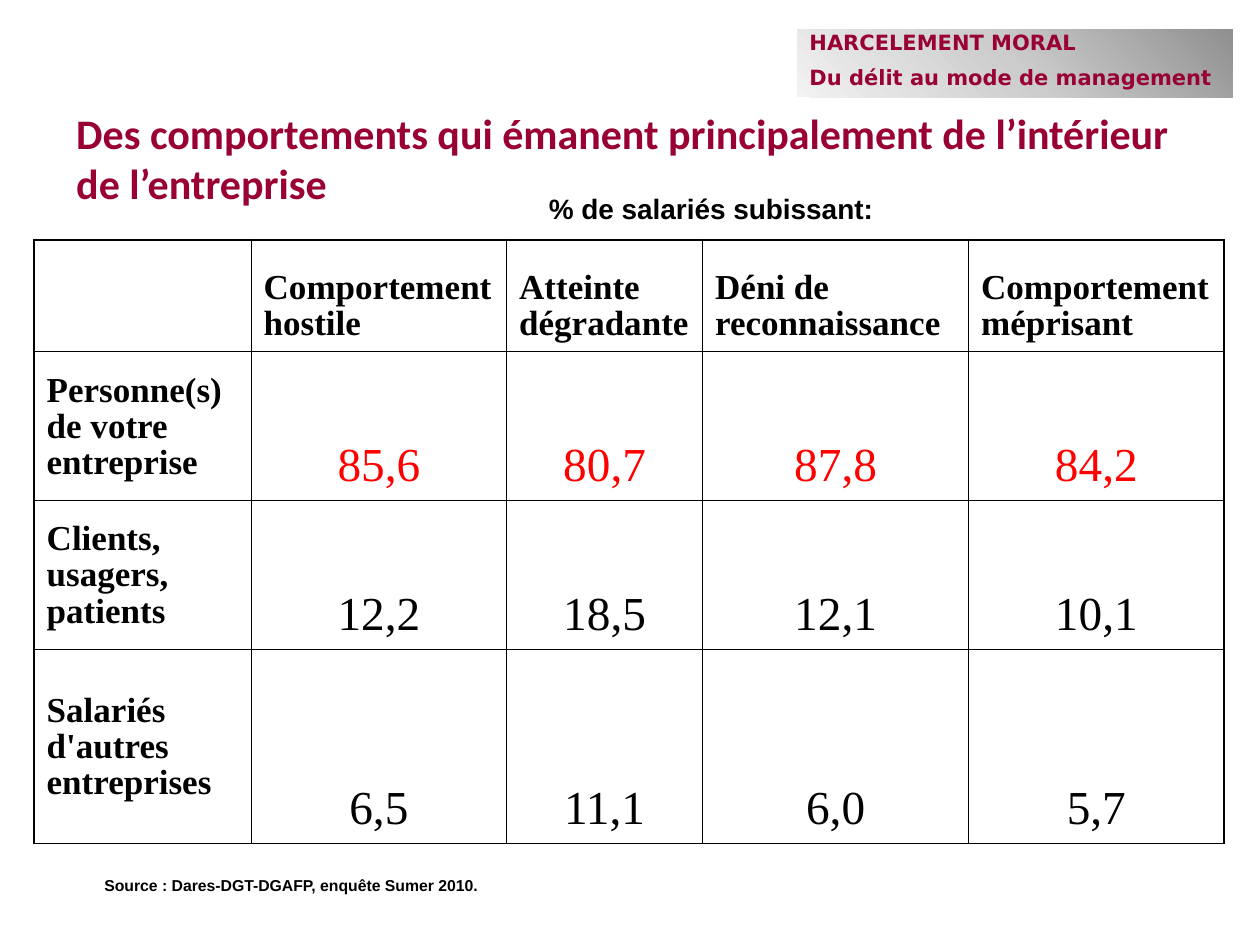
from dataclasses import dataclass

from lxml.etree import SubElement
from pptx import Presentation
from pptx.dml.color import RGBColor
from pptx.enum.shapes import MSO_SHAPE as Shape
from pptx.enum.text import MSO_ANCHOR as Anchor, PP_ALIGN as Align
from pptx.oxml.ns import qn
from pptx.util import Pt

PLUM, BLACK, RED, WHITE = "990033", "000000", "FF0000", "FFFFFF"
OUTER, INNER = 1.08, 0.45

COLUMN_WIDTHS = (124, 146, 112, 152, 146)
ROW_HEIGHTS = (64, 85, 85, 111)
BEHAVIOURS = ("", "Comportement hostile", "Atteinte dégradante",
              "Déni de reconnaissance", "Comportement méprisant")


@dataclass
class Origin:
    label: str
    rates: tuple[str, ...]
    color: str = BLACK


ORIGINS = (
    Origin("Personne(s) de votre entreprise", ("85,6", "80,7", "87,8", "84,2"), RED),
    Origin("Clients, usagers, patients", ("12,2", "18,5", "12,1", "10,1")),
    Origin("Salariés d'autres entreprises", ("6,5", "11,1", "6,0", "5,7")),
)


@dataclass
class Caption:
    text: str
    box: tuple[float, float, float, float]
    size: float
    font: str = "Arial"
    color: str = BLACK
    anchor: Anchor = Anchor.TOP


CAPTIONS = (
    Caption("Des comportements qui émanent principalement de l’intérieur de l’entreprise",
            (36.5, 62.5, 648, 60), 24, "Calibri", PLUM, Anchor.BOTTOM),
    Caption("% de salariés subissant:", (306.5, 109.5, 218, 19), 16, anchor=Anchor.MIDDLE),
    Caption("Source : Dares-DGT-DGAFP, enquête Sumer 2010.", (52.5, 497, 261.5, 18), 9),
)


def rgb(color: str) -> RGBColor:
    return RGBColor.from_string(color)


def write(frame, text: str, *, size: float, font: str, color: str = BLACK, bold: bool = True,
          align: Align = Align.LEFT, spacing: float = 1.0, gap: float = 0) -> None:
    """Fill a text frame, one paragraph a line, with gap points between paragraphs."""
    for index, line in enumerate(text.split("\n")):
        paragraph = frame.add_paragraph() if index else frame.paragraphs[0]
        paragraph.alignment = align
        paragraph.line_spacing = spacing
        if index:
            paragraph.space_before = Pt(gap)
        run = paragraph.add_run()
        run.text = line
        run.font.name, run.font.size, run.font.bold = font, Pt(size), bold
        run.font.color.rgb = rgb(color)


def add_caption(slide, caption: Caption) -> None:
    frame = slide.shapes.add_textbox(*map(Pt, caption.box)).text_frame
    frame.word_wrap = True
    frame.vertical_anchor = caption.anchor
    write(frame, caption.text, size=caption.size, font=caption.font, color=caption.color)


def add_border(cell, side: str, width: float) -> None:
    line = SubElement(cell._tc.get_or_add_tcPr(), qn(f"a:ln{side}"), w=str(int(Pt(width))))
    SubElement(SubElement(line, qn("a:solidFill")), qn("a:srgbClr"), val=BLACK)


def format_cell(cell, row: int, column: int) -> None:
    last_row, last_column = len(ROW_HEIGHTS) - 1, len(COLUMN_WIDTHS) - 1
    edges = {"L": column == 0, "R": column == last_column, "T": row == 0, "B": row == last_row}
    for side, is_outer in edges.items():
        add_border(cell, side, OUTER if is_outer else INNER)
    cell.fill.solid()
    cell.fill.fore_color.rgb = rgb(WHITE)
    cell.margin_left = cell.margin_right = Pt(7.2)
    cell.margin_top, cell.margin_bottom = Pt(6.5), Pt(5)
    cell.vertical_anchor = Anchor.MIDDLE if row and not column else Anchor.BOTTOM


def add_rates_table(slide) -> None:
    table = slide.shapes.add_table(
        len(ROW_HEIGHTS), len(COLUMN_WIDTHS), Pt(19.5), Pt(137),
        Pt(sum(COLUMN_WIDTHS)), Pt(sum(ROW_HEIGHTS))).table
    table.first_row = table.horz_banding = False
    for column, width in zip(table.columns, COLUMN_WIDTHS):
        column.width = Pt(width)
    for row, height in zip(table.rows, ROW_HEIGHTS):
        row.height = Pt(height)

    contents = [BEHAVIOURS] + [(origin.label, *origin.rates) for origin in ORIGINS]
    for row, texts in enumerate(contents):
        for column, text in enumerate(texts):
            cell = table.cell(row, column)
            format_cell(cell, row, column)
            if row and column:
                look = dict(size=27, bold=False, align=Align.CENTER, color=ORIGINS[row - 1].color)
            else:
                look = dict(size=20)
            if text:
                write(cell.text_frame, text, font="Times New Roman", spacing=0.93, **look)


def fill_from_top_right(shape, stops: dict[int, str]) -> None:
    """Give the shape a circular gradient centred on its top right corner."""
    shape.fill.gradient()
    gradient = shape._element.spPr.find(qn("a:gradFill"))
    for child in list(gradient):
        gradient.remove(child)
    stop_list = SubElement(gradient, qn("a:gsLst"))
    for percent, color in stops.items():
        stop = SubElement(stop_list, qn("a:gs"), pos=str(percent * 1000))
        SubElement(stop, qn("a:srgbClr"), val=color)
    circle = SubElement(gradient, qn("a:path"), {"path": "circle"})
    SubElement(circle, qn("a:fillToRect"), l="100000", b="100000")


def add_theme_banner(slide) -> None:
    banner = slide.shapes.add_shape(Shape.RECTANGLE, Pt(455.5), Pt(17), Pt(249), Pt(38.5))
    banner.shadow.inherit = False
    banner.line.fill.background()
    fill_from_top_right(banner, {0: "909090", 50: "CCCCCC", 100: "F2F2F2"})
    banner.text_frame.word_wrap = True
    banner.text_frame.vertical_anchor = Anchor.TOP
    write(banner.text_frame, "HARCELEMENT MORAL\nDu délit au mode de management",
          size=12, font="DejaVu Sans", color=PLUM, spacing=0.7, gap=10)


def main() -> None:
    presentation = Presentation()
    presentation.slide_width, presentation.slide_height = Pt(720), Pt(540)
    slide = presentation.slides.add_slide(presentation.slide_layouts[6])
    title, subtitle, source = CAPTIONS
    add_caption(slide, title)
    add_caption(slide, subtitle)
    add_rates_table(slide)
    add_caption(slide, source)
    add_theme_banner(slide)
    presentation.save("out.pptx")


if __name__ == "__main__":
    main()
